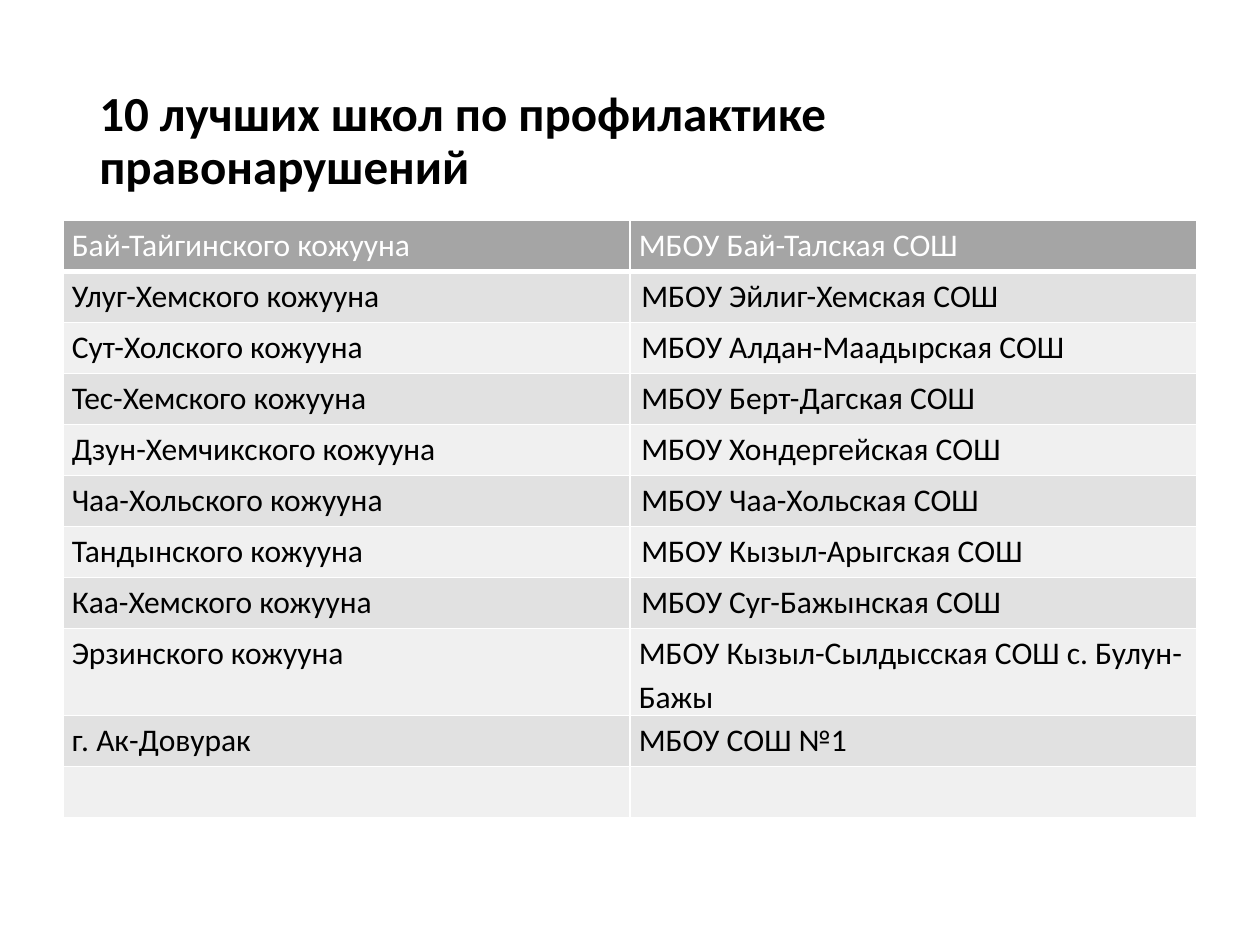
import pptx
import pptx.dml.color
import pptx.enum.text
import pptx.oxml
import pptx.oxml.ns
import pptx.util
from pptx.util import Inches

RGBColor = pptx.dml.color.RGBColor
ALIGN = pptx.enum.text.PP_ALIGN
ANCHOR = pptx.enum.text.MSO_ANCHOR

BLACK = RGBColor(0x00, 0x00, 0x00)
WHITE = RGBColor(0xFF, 0xFF, 0xFF)
HEADER_GREY = RGBColor(0xA5, 0xA5, 0xA5)
BAND_GREYS = (RGBColor(0xF0, 0xF0, 0xF0), RGBColor(0xE1, 0xE1, 0xE1))

FONT = "Calibri"
ROW_HEIGHT = 0.405
TITLE = "10 лучших школ по профилактике правонарушений"

# District, school, justified school name, first-line indent in inches
SCHOOLS = [
    ("Бай-Тайгинского кожууна", "МБОУ Бай-Талская СОШ", True, 0),
    ("Улуг-Хемского кожууна", "МБОУ Эйлиг-Хемская СОШ", True, 0.02),
    ("Сут-Холского кожууна", "МБОУ Алдан-Маадырская СОШ", True, 0.02),
    ("Тес-Хемского кожууна", "МБОУ Берт-Дагская СОШ", True, 0.02),
    ("Дзун-Хемчикского кожууна", "МБОУ Хондергейская СОШ", True, 0.02),
    ("Чаа-Хольского кожууна", "МБОУ Чаа-Хольская СОШ", True, 0.02),
    ("Тандынского кожууна", "МБОУ Кызыл-Арыгская СОШ", True, 0.02),
    ("Каа-Хемского кожууна", "МБОУ Суг-Бажынская СОШ", True, 0.02),
    ("Эрзинского кожууна", "МБОУ Кызыл-Сылдысская СОШ с. Булун-Бажы", False, 0),
    ("г. Ак-Довурак", "МБОУ СОШ №1", False, 0),
    ("", "", False, 0),
]


def write_text(text_frame, text, size=18, color=BLACK, bold=False, align=ALIGN.LEFT,
               line_spacing=1.15, space_after=10, indent=0):
    paragraph = text_frame.paragraphs[0]
    paragraph.alignment = align
    paragraph.line_spacing = line_spacing
    paragraph.space_after = pptx.util.Pt(space_after)
    if indent:
        paragraph._p.get_or_add_pPr().set("indent", str(Inches(indent)))
    paragraph.font.size = pptx.util.Pt(size)
    if text:
        run = paragraph.add_run()
        run.text = text
        run.font.name = FONT
        run.font.size = pptx.util.Pt(size)
        run.font.bold = bold
        run.font.color.rgb = color


def set_borders(cell, bottom=1):
    properties = cell._tc.get_or_add_tcPr()
    widths = {"lnL": 1, "lnR": 1, "lnT": 1, "lnB": bottom}
    for position, (side, width) in enumerate(widths.items()):
        line = pptx.oxml.parse_xml(
            f'<a:{side} {pptx.oxml.ns.nsdecls("a")} w="{pptx.util.Pt(width)}">'
            f'<a:solidFill><a:srgbClr val="{WHITE}"/></a:solidFill></a:{side}>')
        properties.insert(position, line)


def add_title(slide):
    box = slide.shapes.add_textbox(Inches(0.69), Inches(0.4), Inches(8.62), Inches(1.45))
    box.text_frame.word_wrap = True
    box.text_frame.vertical_anchor = ANCHOR.MIDDLE
    write_text(box.text_frame, TITLE, size=28, bold=True, line_spacing=0.9, space_after=0)


def add_school_table(slide):
    table = slide.shapes.add_table(len(SCHOOLS), 2, Inches(0.5), Inches(1.75),
                                   Inches(9), Inches(ROW_HEIGHT * len(SCHOOLS))).table
    for row_index, (district, school, justified, indent) in enumerate(SCHOOLS):
        is_header = row_index == 0
        table.rows[row_index].height = Inches(ROW_HEIGHT)
        school_align = ALIGN.JUSTIFY if justified else ALIGN.LEFT
        contents = ((district, ALIGN.LEFT, 0), (school, school_align, indent))
        for column_index, (text, align, text_indent) in enumerate(contents):
            cell = table.cell(row_index, column_index)
            if text:
                cell.margin_left = cell.margin_right = Inches(0.07)
                cell.margin_top = cell.margin_bottom = 0
            cell.fill.solid()
            cell.fill.fore_color.rgb = HEADER_GREY if is_header else BAND_GREYS[row_index % 2]
            set_borders(cell, bottom=3 if is_header else 1)
            write_text(cell.text_frame, text, color=WHITE if is_header else BLACK,
                       align=align, indent=text_indent,
                       line_spacing=1.15 if text else 1, space_after=10 if text else 0)


def main():
    presentation = pptx.Presentation()
    presentation.slide_width = Inches(10)
    presentation.slide_height = Inches(7.5)
    slide = presentation.slides.add_slide(presentation.slide_layouts[6])

    # Heading
    add_title(slide)
    # Districts and their best schools
    add_school_table(slide)

    presentation.save("out.pptx")


if __name__ == "__main__":
    main()
